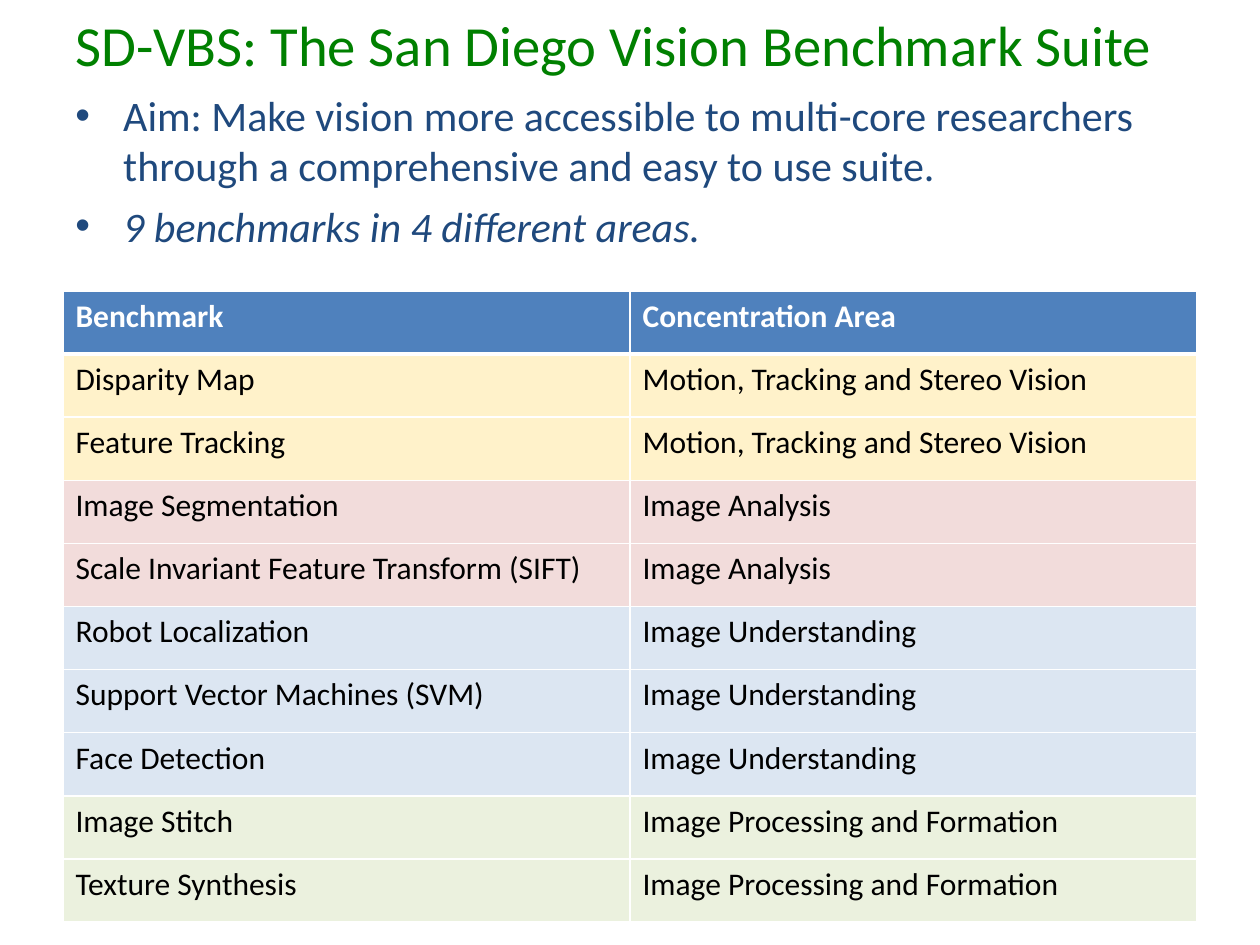
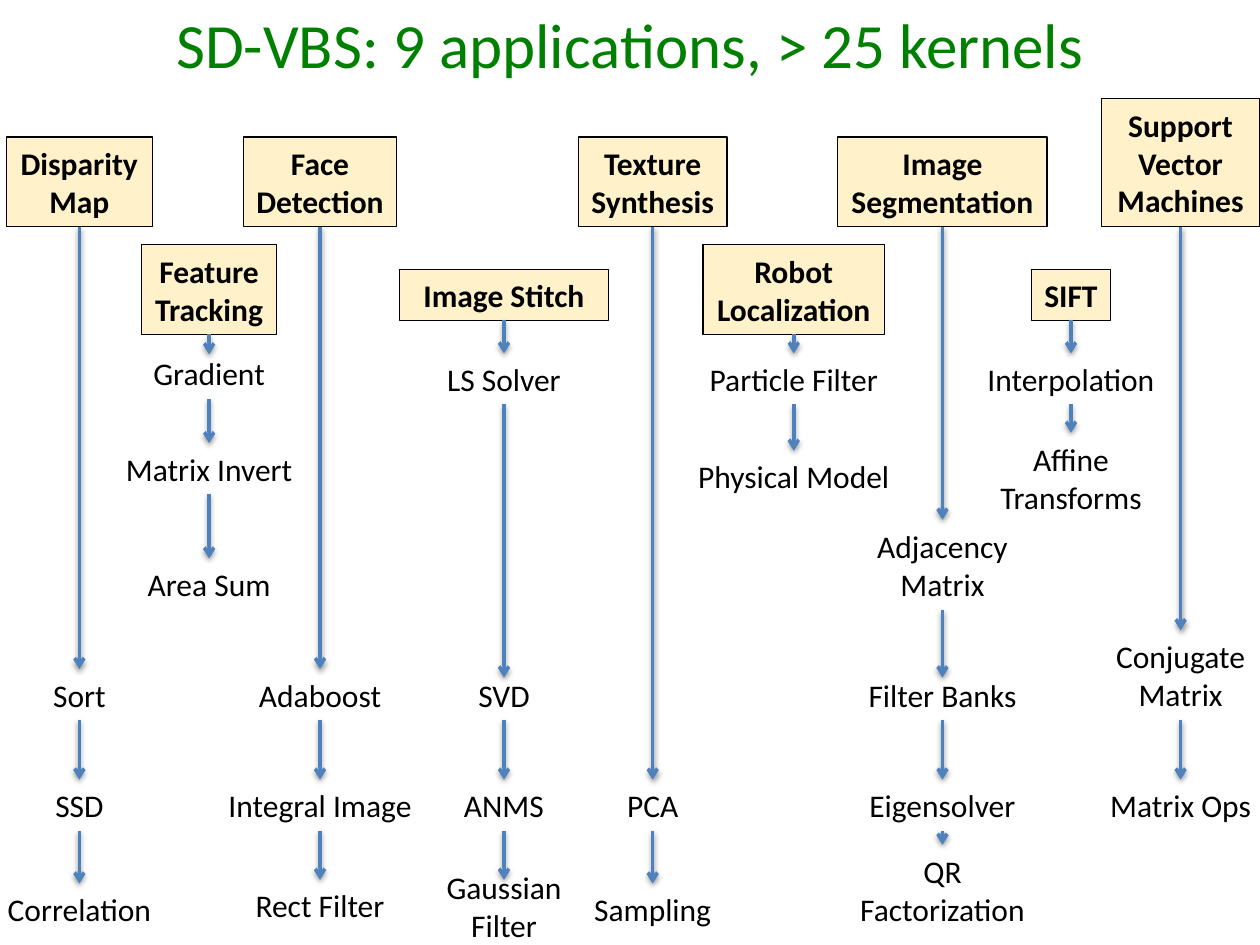
from lxml import etree
from pptx import Presentation
from pptx.dml.color import RGBColor
from pptx.enum.shapes import MSO_CONNECTOR, MSO_SHAPE
from pptx.enum.text import MSO_ANCHOR, PP_ALIGN
from pptx.oxml.ns import qn
from pptx.util import Inches, Pt

RECTANGLE, STRAIGHT = MSO_SHAPE.RECTANGLE, MSO_CONNECTOR.STRAIGHT
LEFT, CENTER = PP_ALIGN.LEFT, PP_ALIGN.CENTER
TOP, MIDDLE = MSO_ANCHOR.TOP, MSO_ANCHOR.MIDDLE
SIDE_TOP, SIDE_BOTTOM = 0, 2

SLIDE_WIDTH, SLIDE_HEIGHT = Inches(10), Inches(7.5)
FONT = "Calibri"
GREEN, NAVY, BLUE = "008000", "1F497D", "4F81BD"
BLACK, WHITE = "000000", "FFFFFF"
CREAM, ROSE, SKY, LIME = "FFF2CA", "F2DCDB", "DCE6F2", "EBF1DE"

TITLE = {"size": Pt(36), "color": GREEN}
LONG_TITLE = {"size": Pt(32.4), "color": GREEN}
BULLET = {"size": Pt(24), "color": NAVY}
LABEL = {"size": Pt(18), "color": BLACK}
HEADING = {**LABEL, "bold": True}
TABLE_HEAD = {**HEADING, "color": WHITE}

AREAS = [
    ("Motion, Tracking and Stereo Vision", CREAM,
     ["Disparity Map", "Feature Tracking"]),
    ("Image Analysis", ROSE,
     ["Image Segmentation", "Scale Invariant Feature Transform (SIFT)"]),
    ("Image Understanding", SKY,
     ["Robot Localization", "Support Vector Machines (SVM)", "Face Detection"]),
    ("Image Processing and Formation", LIME,
     ["Image Stitch", "Texture Synthesis"]),
]

# Lower edges of the diagram's rows, in percent of the slide's height
UPPER_HEADS, LOWER_HEADS, TALL_LOWER_HEADS = 24, 33.9, 35.4
ROW_1, ROW_2, ROW_3, ROW_4, ROW_5, ROW_6 = 42.8, 53.1, 64.5, 76.2, 87.9, 98.9
LINE_SHARE, PADDING_SHARE = 4.1, 1.3

# Centre of each application, then its heading and kernels:
# text, width, lower edge and, where the arrow runs into the box, by how much
APPLICATIONS = [
    (6.3, [("Disparity\nMap", 11.6, UPPER_HEADS), ("Sort", 6.2, ROW_4),
           ("SSD", 5.9, ROW_5), ("Correlation", 13.5, ROW_6)]),
    (16.6, [("Feature\nTracking", 10.7, TALL_LOWER_HEADS),
            ("Gradient", 11, 42.2, 0.7), ("Matrix Invert", 16.6, 52.3),
            ("Area Sum", 11.9, ROW_3)]),
    (25.4, [("Face\nDetection", 12.2, UPPER_HEADS), ("Adaboost", 11.8, ROW_4),
            ("Integral Image", 16.7, ROW_5), ("Rect Filter", 12.4, 98.5)]),
    (40, [("Image Stitch", 16.6, LOWER_HEADS), ("LS Solver", 11.8, ROW_1),
          ("SVD", 6.1, ROW_4, 0.9), ("ANMS", 8.4, ROW_5),
          ("Gaussian\nFilter", 11.2, 100.6, 2)]),
    (51.8, [("Texture\nSynthesis", 11.8, UPPER_HEADS), ("PCA", 6.1, ROW_5),
            ("Sampling", 11.4, ROW_6)]),
    (63, [("Robot\nLocalization", 14.4, TALL_LOWER_HEADS),
          ("Particle Filter", 16.9, ROW_1), ("Physical Model", 20, ROW_2)]),
    (74.8, [("Image\nSegmentation", 16.6, UPPER_HEADS),
            ("Adjacency\nMatrix", 12.5, ROW_3),
            ("Filter Banks", 13.9, ROW_4, 0.9), ("Eigensolver", 13.7, ROW_5),
            ("QR\nFactorization", 15.2, ROW_6)]),
    (85, [("SIFT", 6.3, LOWER_HEADS), ("Interpolation", 15.4, ROW_1),
          ("Affine\nTransforms", 13.4, 55.3)]),
    (93.7, [("Support\nVector\nMachines", 12.6, UPPER_HEADS),
            ("Conjugate\nMatrix", 12.4, ROW_4), ("Matrix Ops", 13.3, ROW_5)]),
]


def across(percent):
    return round(SLIDE_WIDTH * percent / 100)


def down(percent):
    return round(SLIDE_HEIGHT * percent / 100)


def rgb(hex_color):
    return RGBColor.from_string(hex_color)


def set_font(span, style):
    span.font.name = FONT
    for name, value in style.items():
        if name == "color":
            span.font.color.rgb = rgb(value)
        else:
            setattr(span.font, name, value)


def write(frame, text, style, align=LEFT, anchor=MIDDLE, wrap=True):
    """Fill a text frame with one paragraph per line of text."""
    frame.word_wrap = wrap
    frame.vertical_anchor = anchor
    for number, line in enumerate(text.split("\n")):
        para = frame.paragraphs[0] if number == 0 else frame.add_paragraph()
        para.alignment = align
        span = para.add_run()
        span.text = line
        set_font(span, style)


def add_child(parent, tag, **attributes):
    return etree.SubElement(parent, qn(tag), attributes)


def add_color(parent, hex_color):
    return add_child(add_child(parent, "a:solidFill"), "a:srgbClr", val=hex_color)


def add_title(page, text, style, align):
    box = page.shapes.add_textbox(across(5), 0, across(90), down(9.2))
    write(box.text_frame, text, style, align)


def add_bullets(page, lines):
    box = page.shapes.add_textbox(across(5), down(8.8), across(90), down(22))
    frame = box.text_frame
    write(frame, "\n".join(lines), BULLET, anchor=TOP)
    for para in frame.paragraphs:
        properties = para._p.get_or_add_pPr()
        properties.set("marL", str(Inches(0.38)))
        properties.set("indent", str(-Inches(0.38)))
        add_child(properties, "a:buFont", typeface="Arial")
        add_child(properties, "a:buChar", char="•")
    last = frame.paragraphs[-1]
    last.space_before = Pt(5.8)
    last.runs[0].font.italic = True


def set_borders(cell, widths):
    properties = cell._tc.get_or_add_tcPr()
    for side, width in widths.items():
        line = add_child(properties, f"a:ln{side}", w=str(Pt(width)))
        add_color(line, WHITE)


def add_benchmark_table(page):
    rows = [("Benchmark", "Concentration Area", BLUE)]
    rows += [(name, area, tint) for area, tint, names in AREAS for name in names]
    table = page.shapes.add_table(len(rows), 2, across(5), down(30.8),
                                  across(90), down(66.8)).table
    table.horz_banding = False
    for row, (*texts, tint) in enumerate(rows):
        for column, text in enumerate(texts):
            cell = table.cell(row, column)
            set_borders(cell, {"L": 1, "R": 1, "T": 3 if row == 1 else 1,
                               "B": 3 if row == 0 else 1})
            cell.fill.solid()
            cell.fill.fore_color.rgb = rgb(tint)
            write(cell.text_frame, text, LABEL if row else TABLE_HEAD, anchor=TOP)


def add_box(page, center, text, width, bottom, is_heading):
    height = PADDING_SHARE + LINE_SHARE * len(text.split("\n"))
    place = (across(center - width / 2), down(bottom - height),
             across(width), down(height))
    if is_heading:
        box = page.shapes.add_shape(RECTANGLE, *place)
        box.shadow.inherit = False
        box.fill.solid()
        box.fill.fore_color.rgb = rgb(CREAM)
        box.line.color.rgb = rgb(BLACK)
        box.line.width = Pt(0.75)
    else:
        box = page.shapes.add_textbox(*place)
    write(box.text_frame, text, HEADING if is_heading else LABEL, CENTER, wrap=False)
    return box


def add_arrow(page, center, upper, lower, overlap):
    """Join two boxes; an overlap lets the arrowhead run into the lower one."""
    x = across(center)
    arrow = page.shapes.add_connector(STRAIGHT, x, upper.top + upper.height,
                                      x, lower.top + down(overlap))
    arrow.begin_connect(upper, SIDE_BOTTOM)
    if not overlap:
        arrow.end_connect(lower, SIDE_TOP)
    arrow.line.color.rgb = rgb(BLUE)
    arrow.line.width = Pt(2)
    add_child(arrow.line._get_or_add_ln(), "a:tailEnd", type="arrow")
    effects = add_child(arrow._element.spPr, "a:effectLst")
    shadow = add_child(effects, "a:outerShdw", blurRad=str(Pt(3.1)),
                       dist=str(Pt(1.6)), dir="5400000", rotWithShape="0")
    add_child(add_child(shadow, "a:srgbClr", val=BLACK), "a:alpha", val="38000")


def add_application(page, center, steps):
    upper = None
    for text, width, bottom, *overlap in steps:
        box = add_box(page, center, text, width, bottom, is_heading=upper is None)
        if upper is not None:
            add_arrow(page, center, upper, box, sum(overlap))
        upper = box


def main():
    deck = Presentation()
    deck.slide_width, deck.slide_height = SLIDE_WIDTH, SLIDE_HEIGHT
    blank = deck.slide_layouts[6]

    page = deck.slides.add_slide(blank)
    add_title(page, "SD-VBS: The San Diego Vision Benchmark Suite", LONG_TITLE, LEFT)
    add_bullets(page, [
        "Aim: Make vision more accessible to multi-core researchers "
        "through a comprehensive and easy to use suite.",
        "9 benchmarks in 4 different areas.",
    ])
    add_benchmark_table(page)

    page = deck.slides.add_slide(blank)
    add_title(page, "SD-VBS: 9 applications, > 25 kernels", TITLE, CENTER)
    for center, steps in APPLICATIONS:
        add_application(page, center, steps)

    deck.save("out.pptx")


if __name__ == "__main__":
    main()
